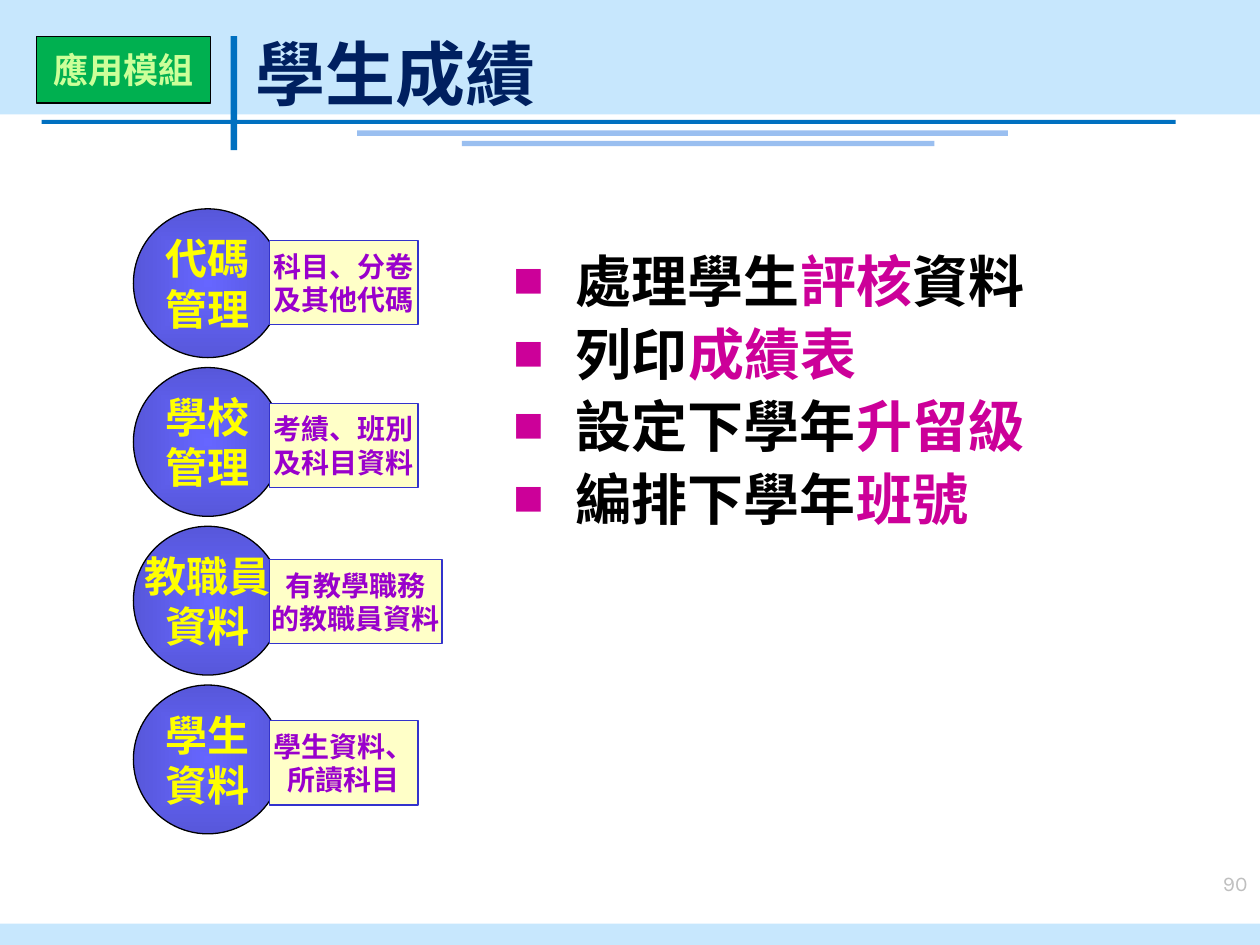
"""Builds the student results module slide."""
from lxml import etree
from pptx import Presentation
from pptx.dml.color import RGBColor
from pptx.enum.shapes import MSO_SHAPE as Shape
from pptx.enum.text import MSO_ANCHOR as Anchor, PP_ALIGN as Align
from pptx.oxml.ns import qn
from pptx.util import Cm, Pt

THEME = {
    "font": "Noto Sans CJK SC", "number_font": "Karla",
    "band": "C7E7FD", "rule": "0070C0", "soft_rule": "9ABFF0",
    "title": "002060", "text": "000000", "accent": "CC0099", "number": "BFBFBF",
    "tag": "00B050", "tag_text": "CCFF99", "black": "000000", "white": "FFFFFF",
    "circle": ("6666FF", "5757DA"), "circle_text": "FFFF00",
    "note": "FFFFC8", "note_line": "3333CC", "note_text": "9900CC",
    "title_size": 40, "body_size": 32, "circle_size": 24,
    "tag_size": 20, "note_size": 16, "number_size": 12,
}


def add_box(kind, x, y, w, h, fill, line=None):
    s = slide.shapes.add_shape(kind, Cm(x), Cm(y), Cm(w), Cm(h))
    s.shadow.inherit = False
    s.fill.solid()
    s.fill.fore_color.rgb = RGBColor.from_string(fill)
    if line:
        s.line.color.rgb = RGBColor.from_string(line)
        s.line.width = Pt(0.75)
    else:
        s.line.fill.background()
    return s


def add_run(p, text, size, color, font=THEME["font"], bold=True):
    r = p.add_run()
    r.text = text
    for name, value in {"size": Pt(size), "bold": bold, "name": font}.items():
        setattr(r.font, name, value)
    r.font.color.rgb = RGBColor.from_string(color)
    etree.SubElement(r.font._element, qn("a:ea"), typeface=font)


prs = Presentation()
prs.slide_width, prs.slide_height = Cm(25.4), Cm(19.05)
slide = prs.slides.add_slide(prs.slide_layouts[5])

for x, y, w, h, color in [
    (0, 0, 25.4, 2.31, "band"), (0, 18.62, 25.4, 0.43, "band"),
    (4.65, 0.73, 0.13, 2.3, "rule"), (0.84, 2.42, 22.86, 0.08, "rule"),
    (7.2, 2.63, 13.12, 0.11, "soft_rule"), (9.31, 2.84, 9.53, 0.11, "soft_rule"),
]:
    add_box(Shape.RECTANGLE, x, y, w, h, THEME[color])

title = slide.shapes.title
for name, value in {"left": 4.9, "top": 0.33, "width": 6.91, "height": 2.11}.items():
    setattr(title, name, Cm(value))
slide.shapes._spTree.append(title._element)
tf = title.text_frame
tf.vertical_anchor = Anchor.BOTTOM
p = tf.paragraphs[0]
p.alignment = Align.LEFT
add_run(p, "學生成績", THEME["title_size"], THEME["title"])

body = add_box(Shape.RECTANGLE, 10.11, 4.85, 13.26, 5.99, THEME["white"])
tf = body.text_frame
tf.word_wrap = True
tf.vertical_anchor = Anchor.TOP
for i, parts in enumerate([
    ("處理學生", "評核", "資料"), ("列印", "成績表"),
    ("設定下學年", "升留級"), ("編排下學年", "班號"),
]):
    p = tf.add_paragraph() if i else tf.paragraphs[0]
    p.alignment = Align.LEFT
    p.space_before = Pt(3 if i else 0)
    pPr = p._p.get_or_add_pPr()
    pPr.set("marL", str(Cm(1.25)))
    pPr.set("indent", str(Cm(-1.25)))
    bullet_color = etree.SubElement(pPr, qn("a:buClr"))
    etree.SubElement(bullet_color, qn("a:srgbClr"), val=THEME["accent"])
    etree.SubElement(pPr, qn("a:buSzPct"), val="55000")
    etree.SubElement(pPr, qn("a:buFont"), typeface=THEME["font"])
    etree.SubElement(pPr, qn("a:buChar"), char="■")
    for j, part in enumerate(parts):
        add_run(p, part, THEME["body_size"], THEME["accent" if j == 1 else "text"])

number = slide.shapes.add_textbox(Cm(21.11), Cm(17.42), Cm(4.29), Cm(1.27))
number.text_frame.word_wrap = True
p = number.text_frame.paragraphs[0]
p.alignment = Align.RIGHT
add_run(p, "90", THEME["number_size"], THEME["number"], THEME["number_font"], False)

tag = add_box(Shape.RECTANGLE, 0.74, 0.74, 3.5, 1.34, THEME["tag"], THEME["black"])
labels = [(tag, ["應用模組"], "tag")]

modules = [
    (["代碼", "管理"], ["科目、分卷", "及其他代碼"], 4.85, 3),
    (["學校", "管理"], ["考績、班別", "及科目資料"], 8.13, 3),
    (["教職員", "資料"], ["有教學職務", "的教職員資料"], 11.28, 3.48),
    (["學生", "資料"], ["學生資料、", "所讀科目"], 14.53, 3),
]
for i, (name, note, note_top, note_width) in enumerate(modules):
    circle = add_box(Shape.OVAL, 2.69, 4.21 + 3.2 * i, 3, 3, THEME["white"], THEME["black"])
    circle.fill.gradient()
    for stop, color in zip(circle.fill.gradient_stops, THEME["circle"]):
        stop.color.rgb = RGBColor.from_string(color)
    grad = circle._element.spPr.find(qn("a:gradFill"))
    grad.remove(grad.find(qn("a:lin")))
    center = etree.SubElement(grad, qn("a:path"), path="shape")
    etree.SubElement(center, qn("a:fillToRect"), l="50000", t="50000", r="50000", b="50000")
    card = add_box(Shape.RECTANGLE, 5.43, note_top, note_width, 1.7,
                   THEME["note"], THEME["note_line"])
    labels += [(circle, name, "circle"), (card, note, "note")]

for s, lines, style in labels:
    tf = s.text_frame
    tf.word_wrap = False
    tf.vertical_anchor = Anchor.MIDDLE
    for i, line in enumerate(lines):
        p = tf.add_paragraph() if i else tf.paragraphs[0]
        p.alignment = Align.CENTER
        add_run(p, line, THEME[f"{style}_size"], THEME[f"{style}_text"])

prs.save("out.pptx")
